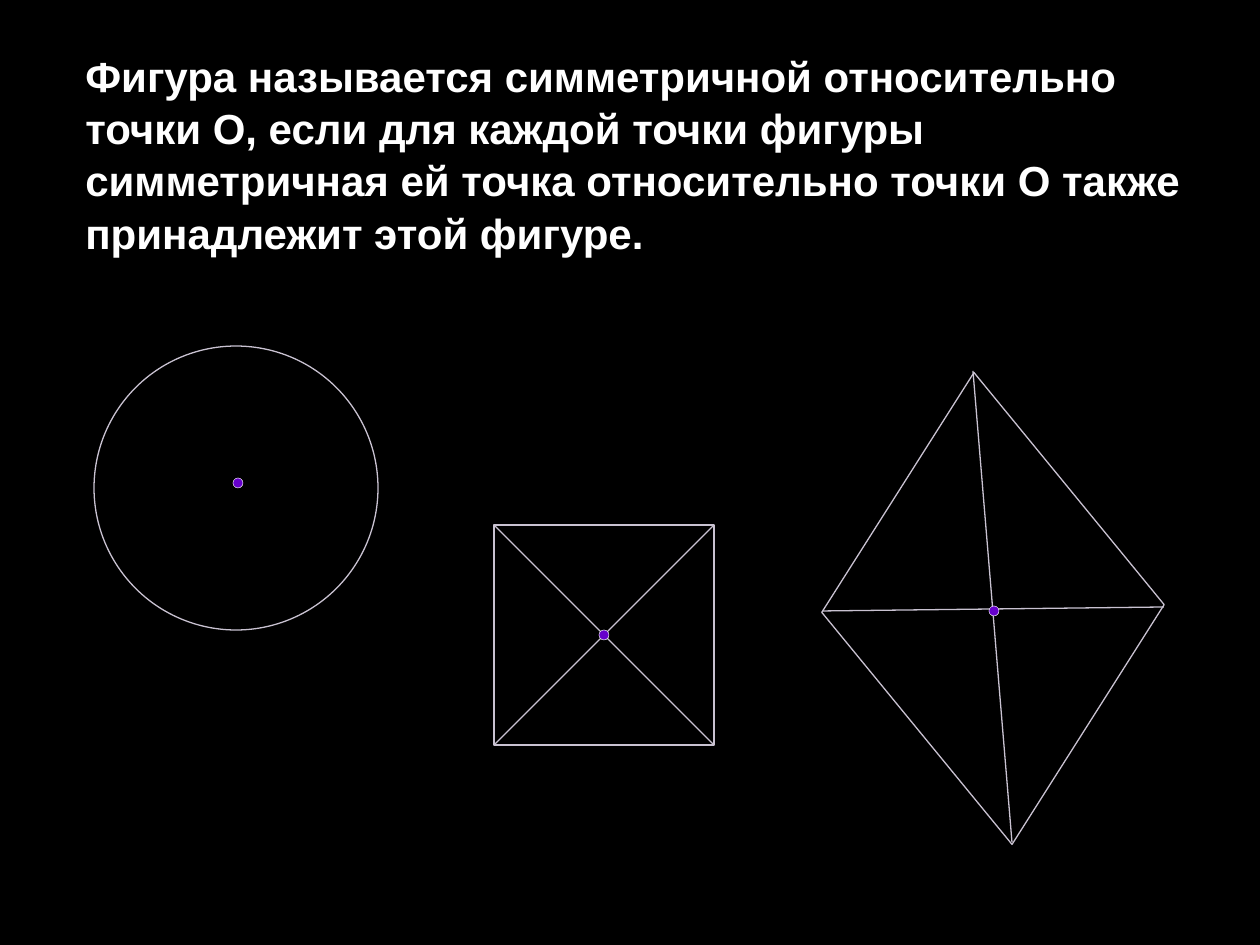
from lxml.etree import SubElement
from pptx import Presentation
from pptx.dml.color import RGBColor
from pptx.enum.shapes import MSO_CONNECTOR, MSO_SHAPE
from pptx.enum.text import MSO_AUTO_SIZE
from pptx.oxml.ns import qn
from pptx.util import Emu, Pt

BLACK = RGBColor(0x00, 0x00, 0x00)
WHITE = RGBColor(0xFF, 0xFF, 0xFF)
GREY = RGBColor(0xC9, 0xC2, 0xD1)
VIOLET = RGBColor(0x66, 0x00, 0xCC)
FONT = "Arial"
SCALE = 914400 / 126
DOT = 10

RULE = (
    "Фигура называется симметричной относительно точки О, "
    "если для каждой точки фигуры симметричная ей точка "
    "относительно точки О также принадлежит этой фигуре."
)


def px(*sizes):
    return [Emu(round(size * SCALE)) for size in sizes]


class Board:
    def __init__(self, slide):
        self.slide = slide
        self.target = slide.shapes
        fill = slide.background.fill
        fill.solid()
        fill.fore_color.rgb = BLACK

    def group(self):
        """Send the elements that follow to a new group."""
        self.target = self.slide.shapes.add_group_shape().shapes

    def text(self, words, x, y, w, h, size):
        frame = self.target.add_textbox(*px(x, y, w, h)).text_frame
        frame.word_wrap = True
        frame.auto_size = MSO_AUTO_SIZE.SHAPE_TO_FIT_TEXT
        para = frame.paragraphs[0]
        para.text = words
        para.line_spacing = 1.04
        para.font.name = FONT
        para.font.size = Pt(size)
        para.font.bold = True
        para.font.color.rgb = WHITE

    def shape(self, kind, x, y, w, h, fill=None, line=GREY, width=0.75):
        item = self.target.add_shape(kind, *px(x, y, w, h))
        item.shadow.inherit = False
        if fill is None:
            item.fill.background()
        else:
            item.fill.solid()
            item.fill.fore_color.rgb = fill
        item.line.color.rgb = line
        item.line.width = Pt(width)
        return item

    def dot(self, x, y):
        """Mark a centre of symmetry at x, y."""
        self.shape(MSO_SHAPE.OVAL, x - DOT // 2, y - DOT // 2, DOT, DOT,
                   VIOLET, WHITE, 0.25)

    def line(self, x1, y1, x2, y2):
        item = self.target.add_connector(
            MSO_CONNECTOR.STRAIGHT, *px(x1, y1, x2, y2))
        item.line.color.rgb = GREY
        item.line.width = Pt(0.75)
        SubElement(item.element.spPr, qn("a:effectLst"))


def main():
    deck = Presentation()
    deck.slide_width, deck.slide_height = px(1260, 945)
    board = Board(deck.slides.add_slide(deck.slide_layouts[6]))

    board.text(RULE, 73, 42, 1144, 214, 24)

    board.shape(MSO_SHAPE.OVAL, 94, 346, 284, 284)
    left, top, side = 494, 525, 220
    right, base = left + side, top + side
    board.shape(MSO_SHAPE.RECTANGLE, left, top, side, side)
    kite = board.shape(MSO_SHAPE.PARALLELOGRAM, 804, 466, 378, 285)
    kite.adjustments[0] = 0.33
    kite.rotation = 302.4
    board.dot(238, 483)

    board.group()
    board.line(left, top, right, base)
    board.line(right, top, left, base)
    board.dot(left + side // 2, top + side // 2)

    board.group()
    board.line(823, 611, 1164, 607)
    board.line(973, 371, 1012, 842)
    board.dot(994, 611)

    deck.save("out.pptx")


if __name__ == "__main__":
    main()
